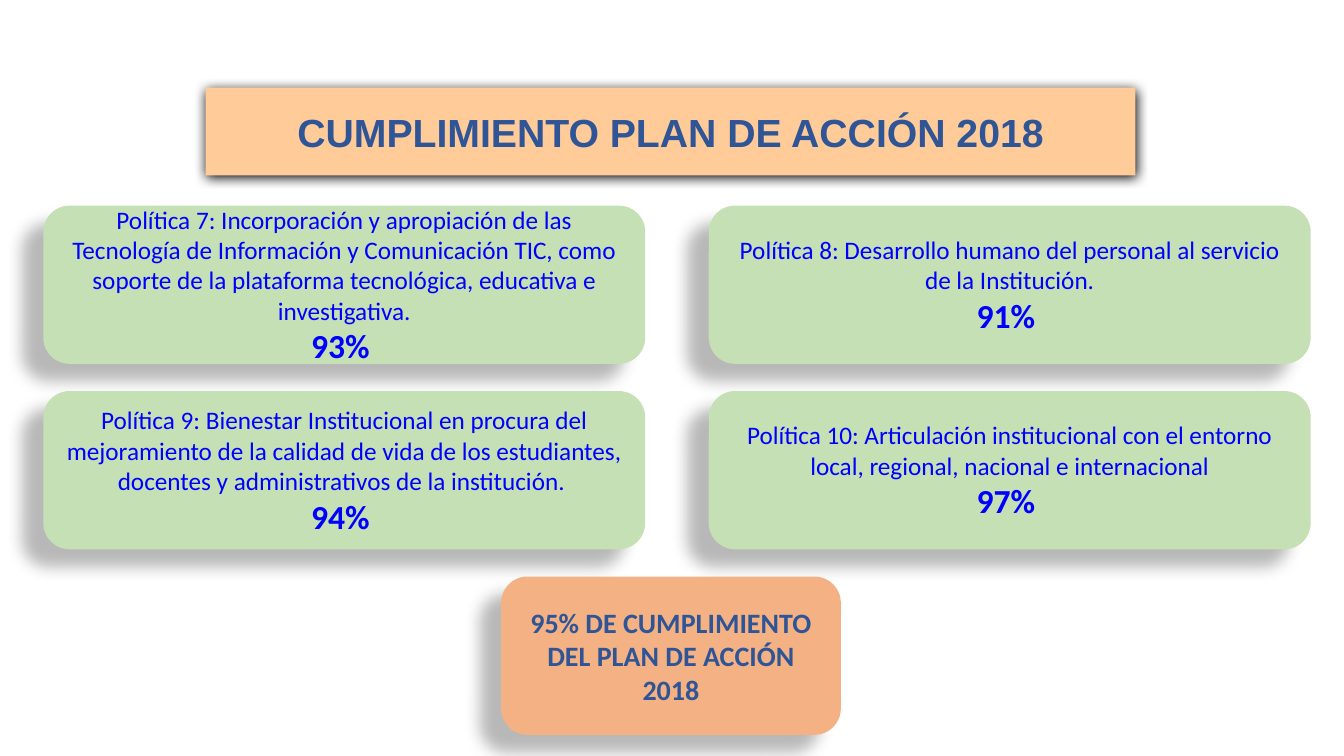
from dataclasses import dataclass

from lxml.etree import SubElement
from pptx import Presentation
from pptx.dml.color import RGBColor
from pptx.enum.shapes import MSO_SHAPE
from pptx.enum.text import MSO_ANCHOR, MSO_AUTO_SIZE, PP_ALIGN
from pptx.oxml.ns import qn
from pptx.shapes.autoshape import Shape
from pptx.slide import Slide
from pptx.util import Inches, Pt

PEACH = RGBColor(0xFF, 0xCC, 0x99)
GREEN = RGBColor(0xC5, 0xE0, 0xB4)
ORANGE = RGBColor(0xF4, 0xB1, 0x83)
NAVY = RGBColor(0x2F, 0x55, 0x97)
BLUE = RGBColor(0x00, 0x00, 0xFF)

CARD_H = 1.57
CARD_W = 5.97
LEFT, TOP = 0.43, 2.04
COL_STEP, ROW_STEP = 6.6, 1.84


@dataclass(frozen=True)
class Shadow:
    alpha: int
    blur: float
    distance: float
    angle: int


@dataclass(frozen=True)
class Line:
    text: str
    size: int
    color: RGBColor
    bold: bool = False
    font: str = "Calibri"


@dataclass(frozen=True)
class Policy:
    text: str
    score: str


TITLE_SHADOW = Shadow(100, 8.5, 1, 90)
CARD_SHADOW = Shadow(28, 11.8, 19.7, 141)

POLICIES = [
    Policy("Política 7: Incorporación y apropiación de las Tecnología de Información y "
           "Comunicación TIC, como soporte de la plataforma tecnológica, educativa e "
           "investigativa.", "93% "),
    Policy("Política 8: Desarrollo humano del personal al servicio de la Institución.",
           "91% "),
    Policy("Política 9: Bienestar Institucional en procura del mejoramiento de la calidad "
           "de vida de los estudiantes, docentes y administrativos de la institución. ",
           "94% "),
    Policy("Política 10: Articulación institucional con el entorno local, regional, "
           "nacional e internacional", "97% "),
]


def add_shadow(sp: Shape, shadow: Shadow) -> None:
    sp.shadow.inherit = False
    effects = sp._element.spPr.find(qn("a:effectLst"))
    outer = SubElement(effects, qn("a:outerShdw"), {
        "blurRad": str(Pt(shadow.blur)),
        "dist": str(Pt(shadow.distance)),
        "dir": str(shadow.angle * 60000),
        "algn": "ctr",
        "rotWithShape": "0",
    })
    color = SubElement(outer, qn("a:srgbClr"), val="000000")
    SubElement(color, qn("a:alpha"), val=str(shadow.alpha * 1000))


def style_box(sp: Shape, fill: RGBColor, shadow: Shadow, lines: list[Line]) -> None:
    sp.fill.solid()
    sp.fill.fore_color.rgb = fill
    sp.line.fill.background()
    add_shadow(sp, shadow)
    tf = sp.text_frame
    tf.text = "\n".join(line.text for line in lines)
    tf.word_wrap = True
    tf.auto_size = MSO_AUTO_SIZE.NONE
    tf.vertical_anchor = MSO_ANCHOR.MIDDLE
    for p, line in zip(tf.paragraphs, lines):
        p.alignment = PP_ALIGN.CENTER
        for r in p.runs:
            r.font.name = line.font
            r.font.size = Pt(line.size)
            r.font.bold = line.bold
            r.font.color.rgb = line.color


def add_card(s: Slide, left: float, top: float, width: float,
             fill: RGBColor, lines: list[Line]) -> None:
    sp = s.shapes.add_shape(MSO_SHAPE.ROUNDED_RECTANGLE, Inches(left), Inches(top),
                            Inches(width), Inches(CARD_H))
    style_box(sp, fill, CARD_SHADOW, lines)


def main() -> None:
    prs = Presentation()
    prs.slide_width, prs.slide_height = Inches(13.33), Inches(7.5)
    s = prs.slides.add_slide(prs.slide_layouts[5])

    # Title banner
    title = s.shapes.title
    title.left, title.top = Inches(2.04), Inches(0.87)
    title.width, title.height = Inches(9.22), Inches(0.87)
    style_box(title, PEACH, TITLE_SHADOW,
              [Line("CUMPLIMIENTO PLAN DE ACCIÓN 2018", 28, NAVY, True, "Arial")])

    # Policies, two per row
    for i, policy in enumerate(POLICIES):
        row, col = divmod(i, 2)
        add_card(s, LEFT + col * COL_STEP, TOP + row * ROW_STEP, CARD_W, GREEN,
                 [Line(policy.text, 18, BLUE), Line(policy.score, 24, BLUE, True)])

    # Overall result
    add_card(s, 4.97, TOP + 2 * ROW_STEP, 3.37, ORANGE,
             [Line("95% DE CUMPLIMIENTO DEL PLAN DE ACCIÓN 2018", 20, NAVY, True)])

    prs.save("out.pptx")


if __name__ == "__main__":
    main()
